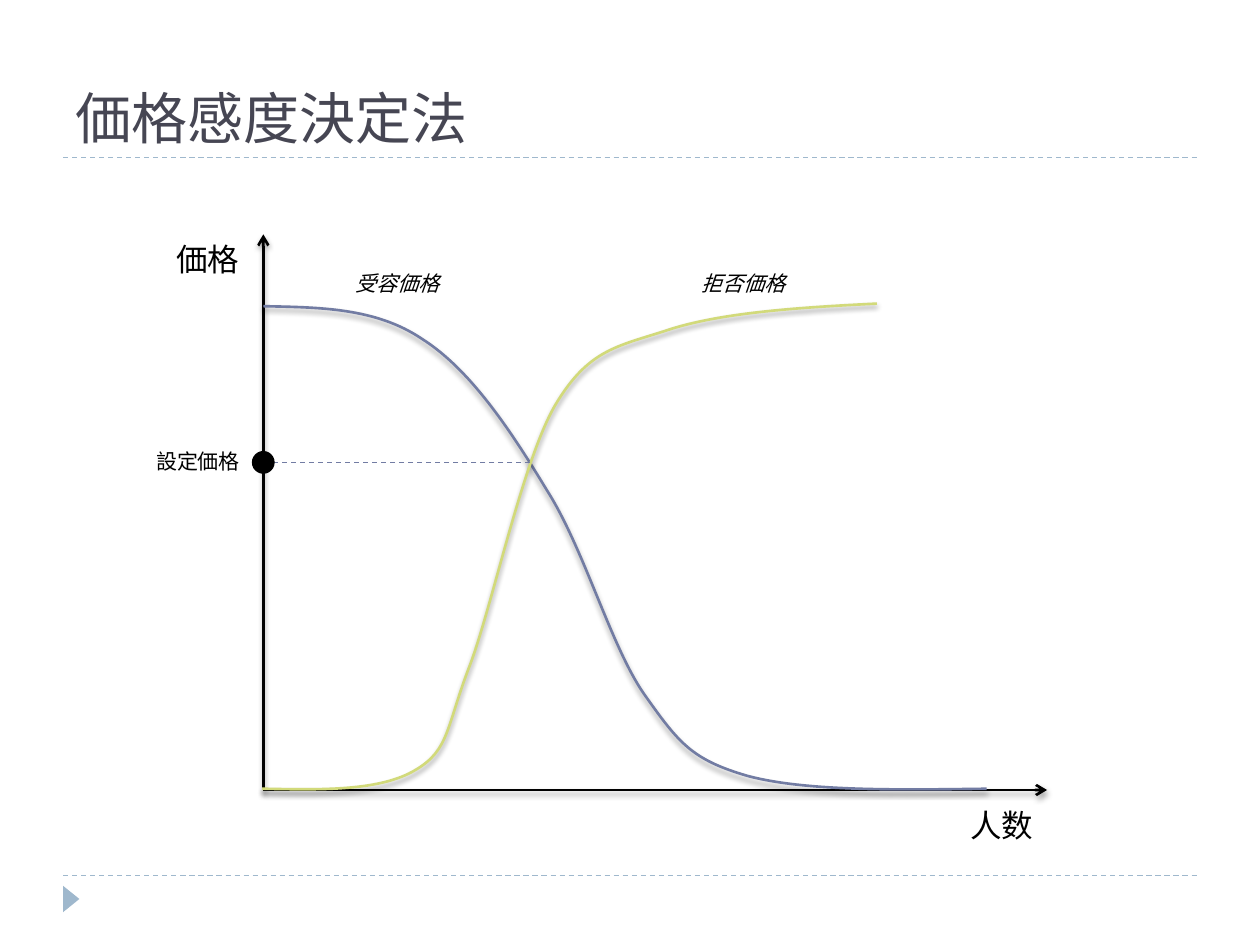
from dataclasses import dataclass

from lxml.etree import SubElement
from pptx import Presentation
from pptx.dml.color import RGBColor
from pptx.enum.dml import MSO_LINE
from pptx.enum.shapes import MSO_CONNECTOR, MSO_SHAPE
from pptx.enum.text import MSO_ANCHOR, MSO_AUTO_SIZE, PP_ALIGN
from pptx.oxml.ns import qn
from pptx.util import Inches, Pt

COLORS = {
    "title": "464653",
    "rule": "9FB8CD",
    "ink": "000000",
    "accepted": "727CA3",
    "rejected": "D2DA7A",
}


@dataclass
class Box:
    left: float
    top: float
    width: float
    height: float

    def point(self, x, y):
        return Inches(self.left + x), Inches(self.top + y)


def color(name):
    return RGBColor.from_string(COLORS[name])


def style_text(frame, text, color_name, para_format, font_format, frame_format):
    frame.text = text
    para = frame.paragraphs[0]
    span = para.runs[0]
    for target, values in ((frame, frame_format), (para, para_format), (span.font, font_format)):
        for name, value in values.items():
            setattr(target, name, value)
    span.font.color.rgb = color(color_name)


def style_line(shape, color_name, width, dash=None):
    shape.line.color.rgb = color(color_name)
    shape.line.width = Pt(width)
    if dash:
        shape.line.dash_style = dash


def set_effects(shape, shadow=False):
    """Give the shape a soft shadow below it, or none at all."""
    effects = SubElement(shape._element.spPr, qn("a:effectLst"))
    if shadow:
        outer = SubElement(effects, qn("a:outerShdw"), blurRad=str(Pt(3)), dist=str(Pt(2)),
                           dir="5400000", rotWithShape="0")
        tone = SubElement(outer, qn("a:srgbClr"), val=COLORS["ink"])
        SubElement(tone, qn("a:alpha"), val="40000")


def add_line(page, start, end, color_name, width, dash=None, arrow=False, shadow=False):
    line = page.shapes.add_connector(MSO_CONNECTOR.STRAIGHT, *start, *end)
    style_line(line, color_name, width, dash)
    if arrow:
        SubElement(line.line._get_or_add_ln(), qn("a:tailEnd"), type="arrow")
    set_effects(line, shadow)


def add_solid(page, kind, box, color_name):
    shape = page.shapes.add_shape(kind, *box.point(0, 0), Inches(box.width), Inches(box.height))
    shape.shadow.inherit = False
    shape.fill.solid()
    shape.fill.fore_color.rgb = color(color_name)
    shape.line.fill.background()
    return shape


def add_curve(page, box, points, color_name):
    """Draw a start point followed by cubic segments of three points each."""
    start, *rest = [box.point(x, y) for x, y in points]
    builder = page.shapes.build_freeform(*start, scale=1.0)
    builder.add_line_segments(rest, close=False)
    curve = builder.convert_to_shape()
    outline = next(curve._element.iter(qn("a:path")))
    steps = outline.findall(qn("a:lnTo"))
    for first in range(0, len(steps), 3):
        cubic = SubElement(outline, qn("a:cubicBezTo"))
        for step in steps[first:first + 3]:
            cubic.append(step[0])
            outline.remove(step)
    curve.fill.background()
    style_line(curve, color_name, 1.5)
    set_effects(curve, shadow=True)


def add_label(page, box, x, y, text, size, width, height, italic=False):
    label = page.shapes.add_textbox(*box.point(x, y), Inches(width), Inches(height))
    style_text(
        label.text_frame, text, "ink",
        {"alignment": PP_ALIGN.LEFT},
        {"name": "Arial", "size": Pt(size), "italic": italic},
        {"word_wrap": False, "auto_size": MSO_AUTO_SIZE.SHAPE_TO_FIT_TEXT},
    )


def add_frame(page, box):
    # Dashed rules above and below the content, with a corner marker
    for y in (0, box.height):
        add_line(page, box.point(0, y), box.point(box.width, y), "rule", 0.75, MSO_LINE.DASH)
    marker = Box(box.left - 0.04, box.top + box.height + 0.12, 0.21, 0.13)
    add_solid(page, MSO_SHAPE.ISOSCELES_TRIANGLE, marker, "rule").rotation = 90


def add_title(page, box):
    title = page.shapes.title
    title.left, title.top = box.point(0, 0)
    title.width, title.height = Inches(box.width), Inches(box.height)
    style_text(
        title.text_frame, "価格感度決定法", "title",
        {"alignment": PP_ALIGN.LEFT},
        {"name": "Roboto Slab", "size": Pt(32)},
        {"vertical_anchor": MSO_ANCHOR.BOTTOM, "auto_size": MSO_AUTO_SIZE.NONE},
    )


def add_price_diagram(page, box):
    # Axes from the shared origin
    origin = box.point(0, box.height)
    for end in (box.point(0, 0), box.point(box.width, box.height)):
        add_line(page, origin, end, "ink", 1.5, arrow=True, shadow=True)

    # Accepted and rejected price curves
    add_curve(page, box, [
        (0, 0.57),
        (0.44, 0.58), (0.89, 0.58), (1.26, 0.83),
        (1.64, 1.07), (1.96, 1.55), (2.25, 2.03),
        (2.55, 2.5), (2.76, 3.28), (3.03, 3.66),
        (3.3, 4.04), (3.4, 4.17), (3.85, 4.3),
        (4.31, 4.42), (5.02, 4.41), (5.74, 4.4),
    ], "accepted")
    add_curve(page, box, [
        (-0.01, 4.4),
        (0.46, 4.41), (0.93, 4.42), (1.21, 4.25),
        (1.48, 4.09), (1.45, 3.91), (1.64, 3.42),
        (1.82, 2.94), (2.06, 1.79), (2.32, 1.35),
        (2.59, 0.9), (2.82, 0.89), (3.24, 0.75),
        (3.66, 0.62), (4.26, 0.58), (4.87, 0.55),
    ], "rejected")

    # Axis and curve names
    add_label(page, box, 5.51, 4.49, "人数", 18, 0.71, 0.4)
    add_label(page, box, -0.79, 0, "価格", 18, 0.71, 0.4)
    for x, text in ((0.63, "受容価格"), (3.38, "拒否価格")):
        add_label(page, box, x, 0.24, text, 12, 0.88, 0.3, italic=True)

    # Set price, where the curves cross
    price = 1.81
    add_line(page, box.point(2.12, price), box.point(0, price), "accepted", 0.75, MSO_LINE.DASH)
    dot = Box(box.left - 0.08, box.top + price - 0.08, 0.16, 0.16)
    style_line(add_solid(page, MSO_SHAPE.OVAL, dot, "ink"), "ink", 1.5)
    add_label(page, box, -0.95, price - 0.16, "設定価格", 12, 0.88, 0.3)


def main():
    deck = Presentation()
    deck.slide_width, deck.slide_height = Inches(10), Inches(7.5)
    page = deck.slides.add_slide(deck.slide_layouts[5])
    add_frame(page, Box(0.5, 1.25, 9, 5.7))
    add_title(page, Box(0.5, 0.17, 9, 1.08))
    add_price_diagram(page, Box(2.09, 1.86, 6.22, 4.41))
    deck.save("out.pptx")


if __name__ == "__main__":
    main()
